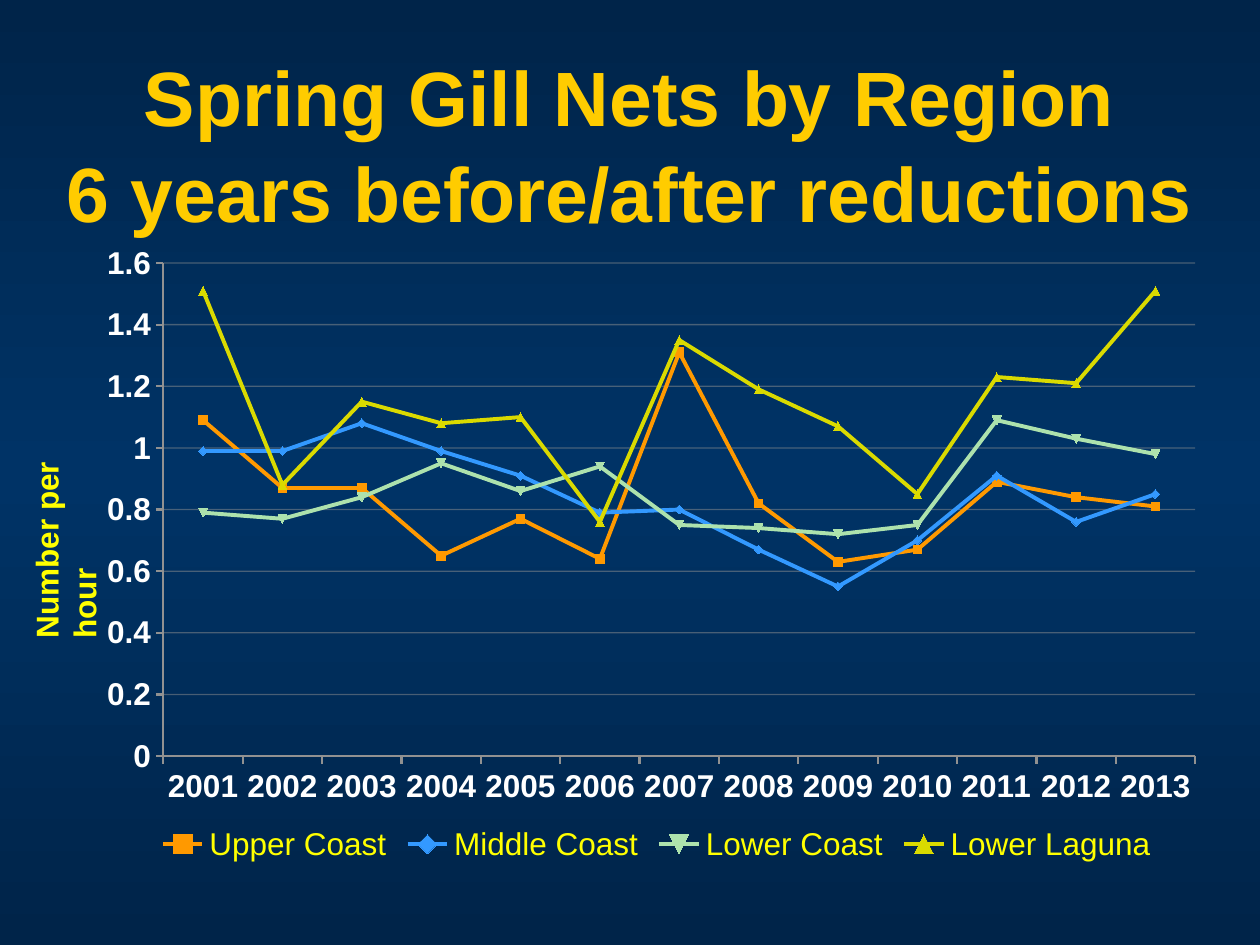
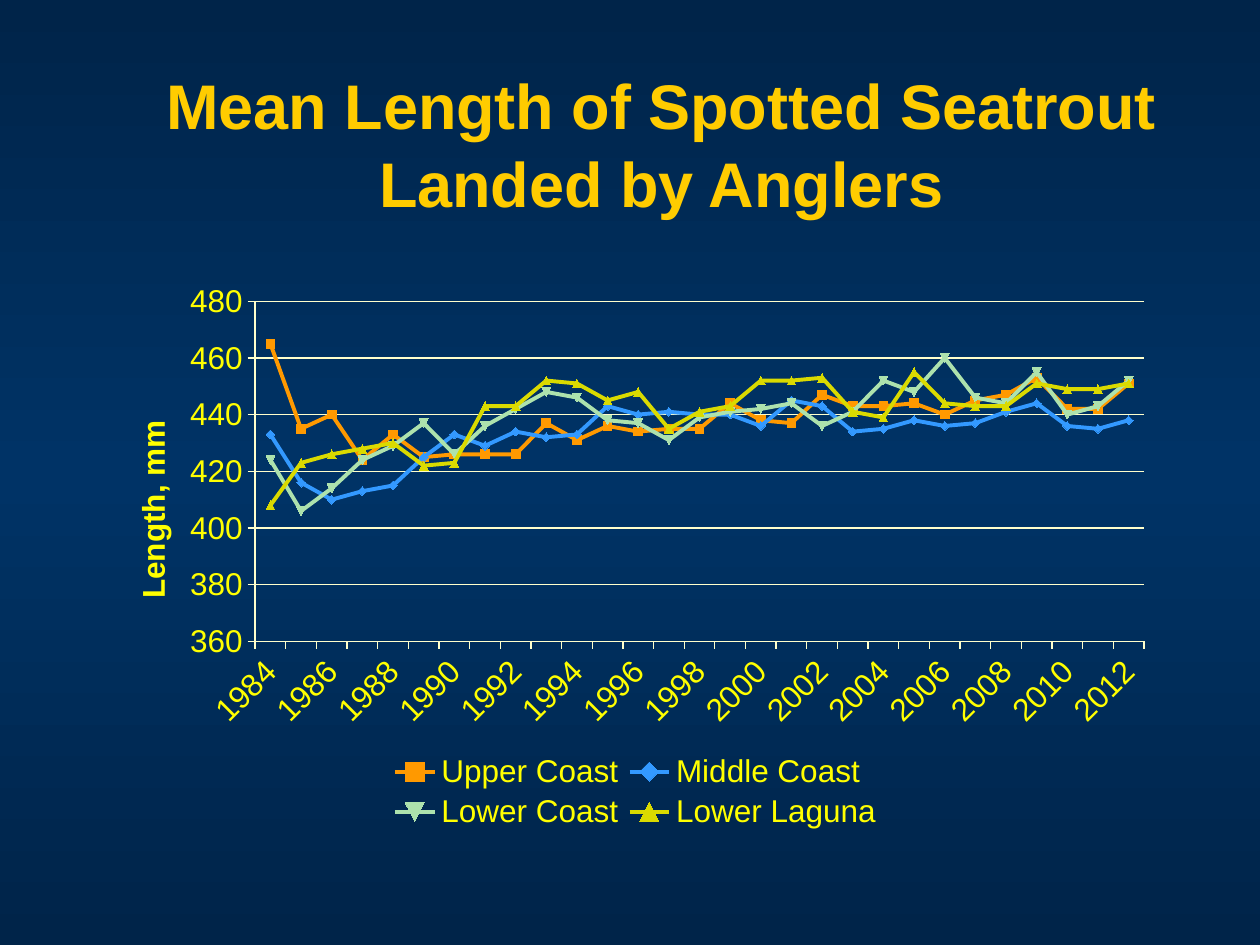
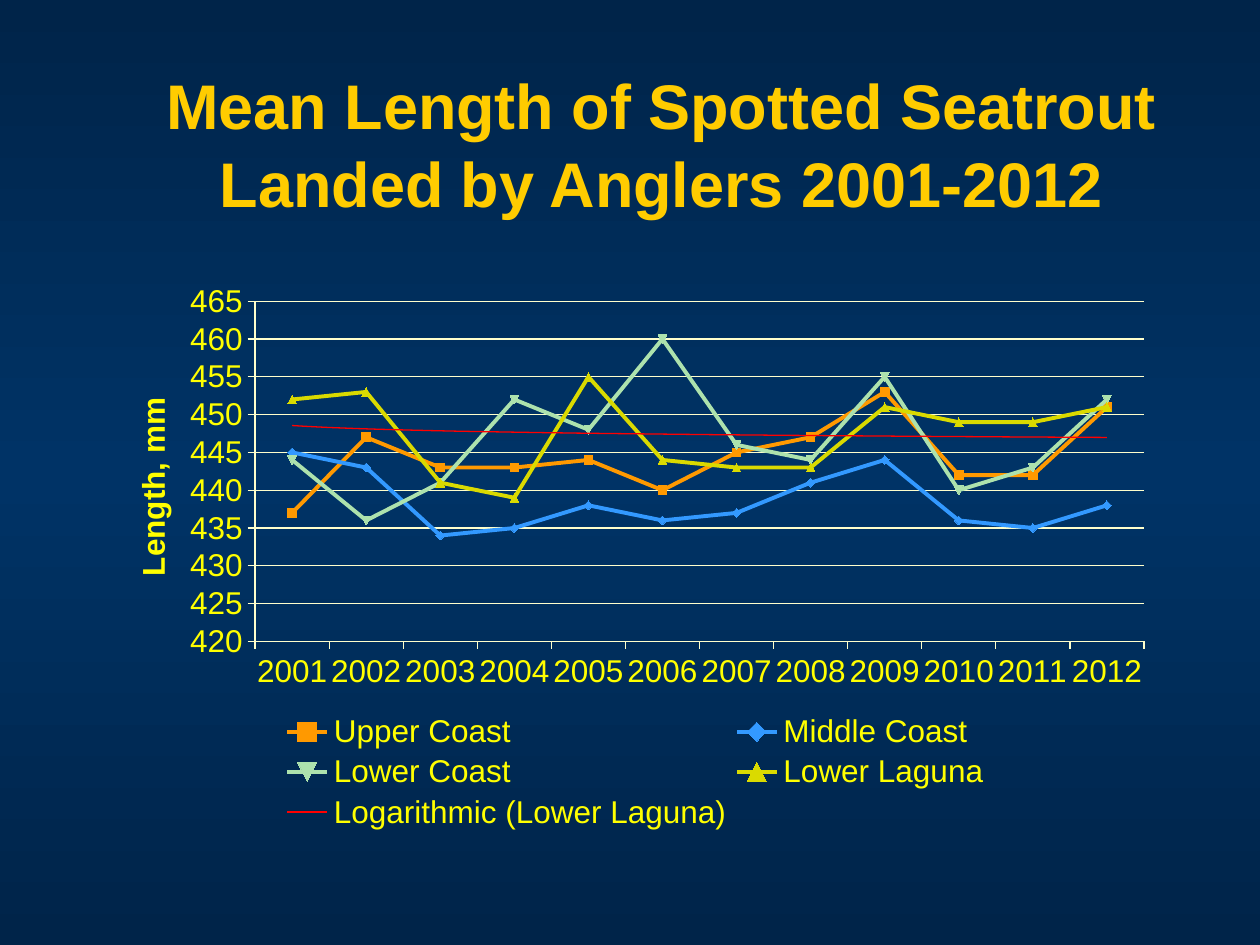
from copy import deepcopy

from lxml import etree
from pptx import Presentation
from pptx.chart.data import CategoryChartData
from pptx.dml.color import RGBColor
from pptx.enum.chart import XL_CHART_TYPE, XL_LEGEND_POSITION, XL_TICK_MARK
from pptx.enum.text import MSO_ANCHOR, MSO_AUTO_SIZE, PP_ALIGN
from pptx.oxml.ns import qn
from pptx.util import Pt

FONT = "Arial"
GOLD, YELLOW, WHITE = "FFCC00", "FFFF00", "FFFFFF"
PALE_YELLOW, GRAY, RED = "FFFFCC", "919191", "FF0000"
BACKGROUND = ["002449", "003366", "002449"]
REGION_COLORS = {
    "Upper Coast": "FF9900",
    "Middle Coast": "3399FF",
    "Lower Coast": "ADE2AD",
    "Lower Laguna": "DADA00",
}

NET_YEARS = range(2001, 2014)
NET_CATCH = {
    "Upper Coast": [1.09, 0.87, 0.87, 0.65, 0.77, 0.64, 1.31, 0.82, 0.63, 0.67,
                    0.89, 0.84, 0.81],
    "Middle Coast": [0.99, 0.99, 1.08, 0.99, 0.91, 0.79, 0.8, 0.67, 0.55, 0.7,
                     0.91, 0.76, 0.85],
    "Lower Coast": [0.79, 0.77, 0.84, 0.95, 0.86, 0.94, 0.75, 0.74, 0.72, 0.75,
                    1.09, 1.03, 0.98],
    "Lower Laguna": [1.51, 0.88, 1.15, 1.08, 1.1, 0.76, 1.35, 1.19, 1.07, 0.85,
                     1.23, 1.21, 1.51],
}

LENGTH_YEARS = range(1984, 2013)
MEAN_LENGTH = {
    "Upper Coast": [465, 435, 440, 424, 433, 425, 426, 426, 426, 437, 431, 436,
                    434, 435, 435, 444, 438, 437, 447, 443, 443, 444, 440, 445,
                    447, 453, 442, 442, 451],
    "Middle Coast": [433, 416, 410, 413, 415, 425, 433, 429, 434, 432, 433, 443,
                     440, 441, 440, 440, 436, 445, 443, 434, 435, 438, 436, 437,
                     441, 444, 436, 435, 438],
    "Lower Coast": [424, 406, 414, 424, 429, 437, 426, 436, 442, 448, 446, 438,
                    437, 431, 439, 441, 442, 444, 436, 441, 452, 448, 460, 446,
                    444, 455, 440, 443, 452],
    "Lower Laguna": [408, 423, 426, 428, 430, 422, 423, 443, 443, 452, 451, 445,
                     448, 435, 441, 443, 452, 452, 453, 441, 439, 455, 444, 443,
                     443, 451, 449, 449, 451],
}


def rgb(color):
    return RGBColor.from_string(color)


def style_font(font, size=18, color=YELLOW, bold=False):
    font.name, font.size, font.bold = FONT, Pt(size), bold
    font.color.rgb = rgb(color)


def style_line(line, color, width, alpha=None):
    line.color.rgb = rgb(color)
    line.width = Pt(width)
    if alpha:
        tint = line._ln.find(".//" + qn("a:srgbClr"))
        etree.SubElement(tint, qn("a:alpha"), val=str(alpha * 1000))


def write_text(frame, text, align=None, spacing=None, **font_format):
    """Put text in a frame; a vertical tab breaks the line."""
    frame.text = text
    paragraph = frame.paragraphs[0]
    paragraph.alignment, paragraph.line_spacing = align, spacing
    for run in paragraph.runs:
        style_font(run.font, **font_format)


def paint_background(master):
    fill = master.background.fill
    fill.gradient()
    fill.gradient_angle = 90
    stop_list = master.element.find(".//" + qn("a:gsLst"))
    stop_list.insert(1, deepcopy(stop_list[0]))
    for index, (stop, color) in enumerate(zip(fill.gradient_stops, BACKGROUND)):
        stop.position = index / 2
        stop.color.rgb = rgb(color)


def add_titled_slide(prs, text, left=54, width=648, size=36):
    slide = prs.slides.add_slide(prs.slide_layouts[5])
    title = slide.shapes.title
    title.left, title.top, title.width, title.height = map(Pt, (left, 36, width, 90))
    frame = title.text_frame
    frame.word_wrap = True
    frame.auto_size = MSO_AUTO_SIZE.NONE
    frame.vertical_anchor = MSO_ANCHOR.MIDDLE
    write_text(frame, text, PP_ALIGN.CENTER, 1.04, size=size, color=GOLD, bold=True)
    return slide


def place(element, after=None, inner=False, **fractions):
    """Fix a chart part at x, y (and w, h) as fractions of the chart."""
    for old in element.findall(qn("c:layout")):
        element.remove(old)
    layout = etree.Element(qn("c:layout"))
    manual = etree.SubElement(layout, qn("c:manualLayout"))
    if inner:
        etree.SubElement(manual, qn("c:layoutTarget"), val="inner")
    for key in "xy":
        etree.SubElement(manual, qn(f"c:{key}Mode"), val="edge")
    for key, value in fractions.items():
        etree.SubElement(manual, qn(f"c:{key}"), val=str(value))
    if after:
        element.find(qn(after)).addnext(layout)
    else:
        element.insert(0, layout)


def style_axis(axis, color, line_color, line_width, bold):
    axis.major_tick_mark = XL_TICK_MARK.OUTSIDE
    axis.minor_tick_mark = XL_TICK_MARK.NONE
    style_font(axis.tick_labels.font, color=color, bold=bold)
    style_line(axis.format.line, line_color, line_width)


def add_region_chart(slide, box, years, regions, scale, plot, legend, label_color=YELLOW,
                     bold=False, line_color=PALE_YELLOW, line_width=0.75, grid_alpha=None):
    """Draw one line per region; scale is minimum, maximum and step."""
    data = CategoryChartData()
    data.categories = years
    for region, values in regions.items():
        data.add_series(region, values)
    chart = slide.shapes.add_chart(
        XL_CHART_TYPE.LINE_MARKERS, *map(Pt, box), data).chart
    chart.has_title = False
    style_font(chart.font)

    for axis in (chart.category_axis, chart.value_axis):
        style_axis(axis, label_color, line_color, line_width, bold)
    values_axis = chart.value_axis
    values_axis.minimum_scale, values_axis.maximum_scale, values_axis.major_unit = scale
    values_axis.has_major_gridlines = True
    style_line(values_axis.major_gridlines.format.line, line_color, 0.75, grid_alpha)

    plot_lines = chart.plots[0]
    plot_lines.vary_by_categories = False
    for series in plot_lines.series:
        color = REGION_COLORS[series.name]
        series.smooth = False
        style_line(series.format.line, color, 2.25)
        series.marker.size = 5
        series.marker.format.fill.solid()
        series.marker.format.fill.fore_color.rgb = rgb(color)
        style_line(series.marker.format.line, color, 0.75)

    chart.has_legend = True
    chart.legend.position = XL_LEGEND_POSITION.BOTTOM
    chart.legend.include_in_layout = False
    style_font(chart.legend.font)
    place(chart.legend._element, after="c:legendPos", **legend)
    place(chart._chartSpace.find(".//" + qn("c:plotArea")), inner=True, **plot)
    return chart


def add_length_chart(slide, first_year, scale, legend, title_y):
    start = LENGTH_YEARS.index(first_year)
    regions = {region: lengths[start:] for region, lengths in MEAN_LENGTH.items()}
    chart = add_region_chart(
        slide, (54, 156, 612, 324), LENGTH_YEARS[start:], regions, scale,
        plot=dict(x=0.15, y=0.05, w=0.83, h=0.6), legend=legend)
    axis_title = chart.value_axis.axis_title
    write_text(axis_title.text_frame, "Length, mm", bold=True)
    rotate_text(axis_title._element, -90)
    place(axis_title._element, after="c:tx", x=0.03, y=title_y)
    return chart


def rotate_text(element, degrees):
    body = element.find(".//" + qn("a:bodyPr"))
    body.set("rot", str(degrees * 60000))
    body.set("vert", "horz")


def add_log_trend(series, color):
    trend = etree.Element(qn("c:trendline"))
    line = etree.SubElement(etree.SubElement(trend, qn("c:spPr")), qn("a:ln"),
                            w=str(Pt(0.75)))
    fill = etree.SubElement(line, qn("a:solidFill"))
    etree.SubElement(fill, qn("a:srgbClr"), val=color)
    etree.SubElement(trend, qn("c:trendlineType"), val="log")
    for tag in ("c:dispRSqr", "c:dispEq"):
        etree.SubElement(trend, qn(tag), val="0")
    series._element.find(qn("c:cat")).addprevious(trend)


def add_vertical_label(slide, text, left, top, width, height):
    label = slide.shapes.add_textbox(*map(Pt, (left, top, width, height)))
    frame = label.text_frame
    frame.word_wrap = True
    frame.auto_size = MSO_AUTO_SIZE.SHAPE_TO_FIT_TEXT
    label._element.find(".//" + qn("a:bodyPr")).set("vert", "vert270")
    write_text(frame, text, bold=True)


def main():
    prs = Presentation()
    prs.slide_width, prs.slide_height = Pt(720), Pt(540)
    paint_background(prs.slide_master)

    gill_nets = add_titled_slide(
        prs, "Spring Gill Nets by Region\v6 years before/after reductions",
        left=0, width=720, size=44)
    add_region_chart(
        gill_nets, (48, 132, 648, 366), NET_YEARS, NET_CATCH, (0, 1.6, 0.2),
        plot=dict(x=0.07, y=0.05, w=0.91, h=0.77),
        legend=dict(x=0.06, y=0.93, w=0.89, h=0.07),
        label_color=WHITE, bold=True, line_color=GRAY, line_width=1.25, grid_alpha=50)
    add_vertical_label(gill_nets, "Number per hour", 12, 216, 56, 156)

    all_years = add_titled_slide(prs, "Mean Length of Spotted Seatrout Landed by Anglers")
    chart = add_length_chart(all_years, 1984, (360, 480, 20),
                             legend=dict(x=0.27, y=0.84, w=0.47, h=0.15), title_y=0.25)
    rotate_text(chart.category_axis._element.find(qn("c:txPr")), -45)

    recent_years = add_titled_slide(
        prs, "Mean Length of Spotted Seatrout Landed by Anglers 2001-2012")
    chart = add_length_chart(recent_years, 2001, (420, 465, 5),
                             legend=dict(x=0.17, y=0.77, w=0.67, h=0.22), title_y=0.21)
    add_log_trend(chart.plots[0].series[-1], RED)

    prs.save("out.pptx")


if __name__ == "__main__":
    main()
